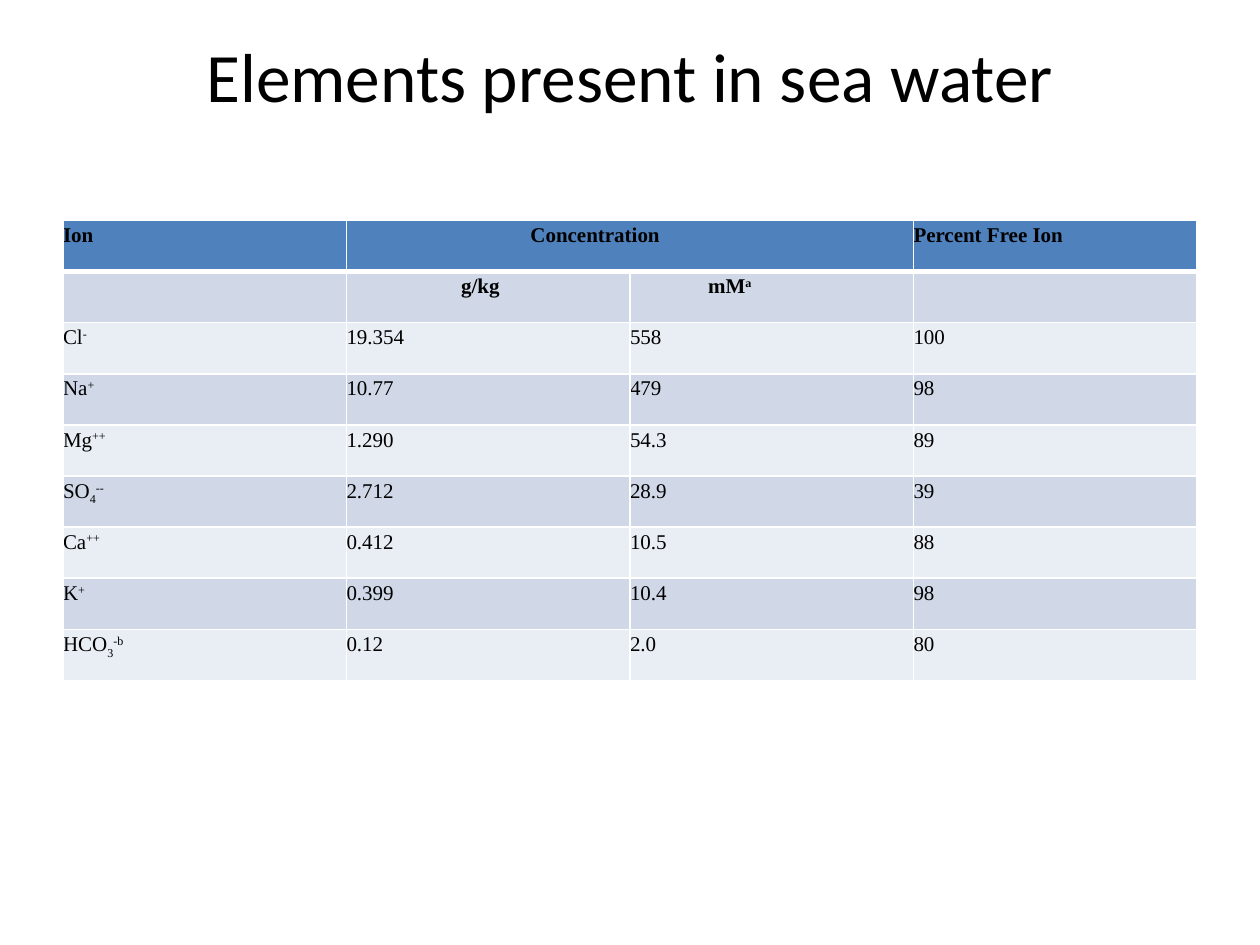
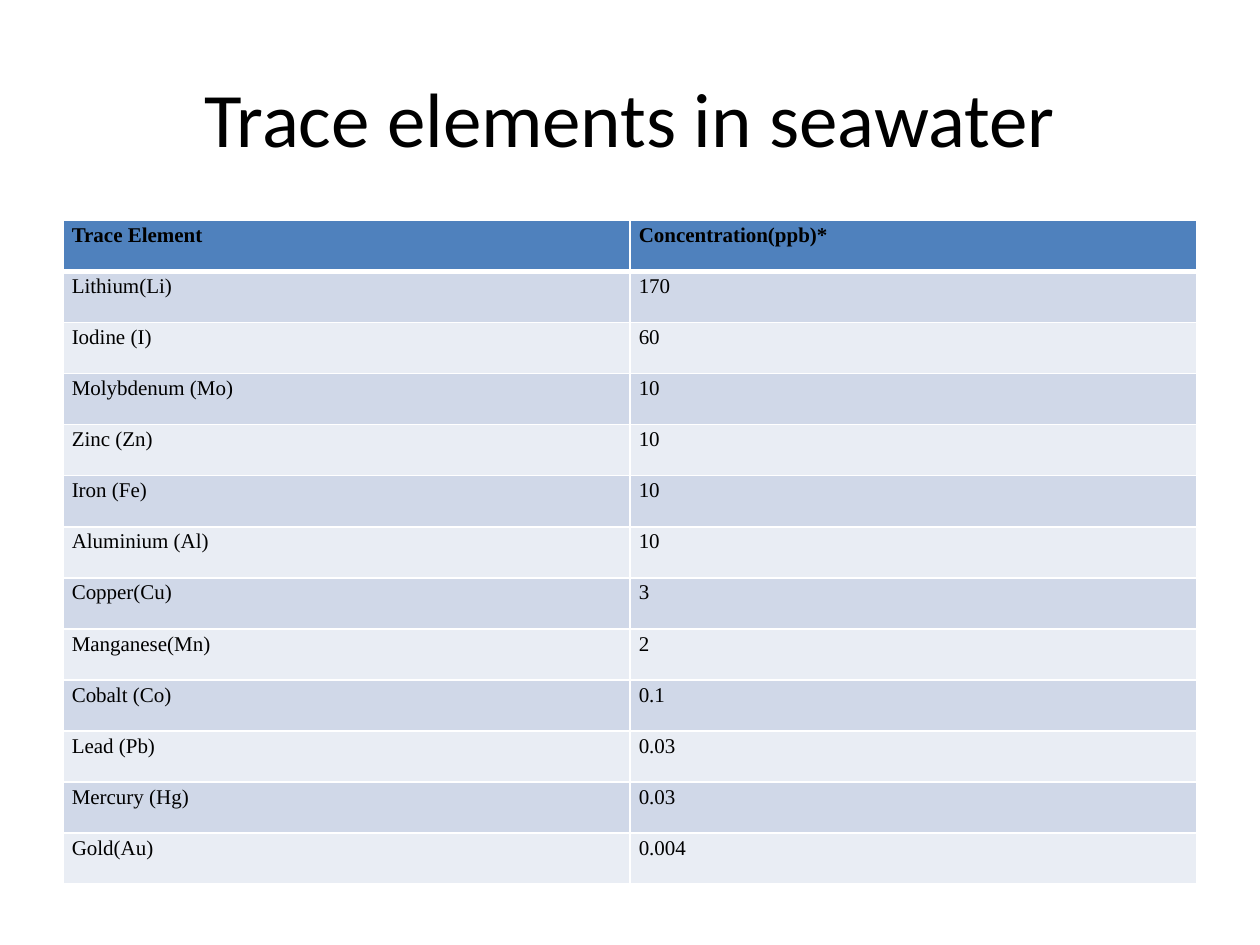
from lxml.etree import SubElement
from pptx import Presentation
from pptx.dml.color import RGBColor
from pptx.enum.text import MSO_ANCHOR, MSO_AUTO_SIZE, PP_ALIGN
from pptx.oxml.ns import qn
from pptx.util import Inches, Pt

COLORS = {
    "text": "000000",
    "header": "4F81BD",
    "odd_band": "D0D8E8",
    "even_band": "E9EDF4",
    "border": "FFFFFF",
}
TITLE_BOX = (0.5, 0.3, 9, 1.25)
TITLE_FONT = "Calibri"
TABLE_FONT = "Times New Roman"
SUBSCRIPT, SUPERSCRIPT = "-25000", "30000"

# A cell is plain text or a (base, subscript, superscript) tuple.
ION_ROWS = [
    ("Ion", "Concentration", "", "Percent Free Ion"),
    ("", "g/kg", ("mM", "", "a"), ""),
    (("Cl", "", "-"), "19.354", "558", "100"),
    (("Na", "", "+"), "10.77", "479", "98"),
    (("Mg", "", "++"), "1.290", "54.3", "89"),
    (("SO", "4", "--"), "2.712", "28.9", "39"),
    (("Ca", "", "++"), "0.412", "10.5", "88"),
    (("K", "", "+"), "0.399", "10.4", "98"),
    (("HCO", "3", "-b"), "0.12", "2.0", "80"),
]
ION_INDENTS = {(0, 1): 1.46, (1, 1): 0.91, (1, 2): 0.62}

TRACE_ROWS = [
    ("Trace Element", "Concentration(ppb)*"),
    ("Lithium(Li)", "170"),
    ("Iodine (I)", "60"),
    ("Molybdenum (Mo)", "10"),
    ("Zinc (Zn)", "10"),
    ("Iron (Fe)", "10"),
    ("Aluminium (Al)", "10"),
    ("Copper(Cu)", "3"),
    ("Manganese(Mn)", "2"),
    ("Cobalt (Co)", "0.1"),
    ("Lead (Pb)", "0.03"),
    ("Mercury (Hg)", "0.03"),
    ("Gold(Au)", "0.004"),
]


def set_attributes(target, values):
    for name, value in values.items():
        setattr(target, name, value)


def format_font(font, name, size, bold=False):
    set_attributes(font, {"name": name, "size": Pt(size), "bold": bold})
    font.color.rgb = RGBColor.from_string(COLORS["text"])


def place_title(slide, box, text, size, bottom_margin=0.05):
    title = slide.shapes.title
    values = dict(zip(("left", "top", "width", "height"), map(Inches, box)))
    set_attributes(title, values)
    set_attributes(title.text_frame, {
        "text": text,
        "word_wrap": True,
        "auto_size": MSO_AUTO_SIZE.NONE,
        "vertical_anchor": MSO_ANCHOR.MIDDLE,
        "margin_bottom": Inches(bottom_margin),
    })
    paragraph = title.text_frame.paragraphs[0]
    paragraph.alignment = PP_ALIGN.CENTER
    format_font(paragraph.runs[0].font, TITLE_FONT, size)


def add_borders(cell, row_index):
    """Draw thin white borders, with a thick one under the first row."""
    widths = {
        "L": 1,
        "R": 1,
        "T": 3 if row_index == 1 else 1,
        "B": 3 if row_index == 0 else 1,
    }
    properties = cell._tc.get_or_add_tcPr()
    for side, width in widths.items():
        line = SubElement(properties, qn(f"a:ln{side}"), w=str(Pt(width)))
        fill = SubElement(line, qn("a:solidFill"))
        SubElement(fill, qn("a:srgbClr"), val=COLORS["border"])


def fill_cell(cell, row_index):
    if row_index == 0:
        color = "header"
    else:
        color = "odd_band" if row_index % 2 else "even_band"
    cell.fill.solid()
    cell.fill.fore_color.rgb = RGBColor.from_string(COLORS[color])


def write_cell(cell, content, bold, space_after):
    paragraph = cell.text_frame.paragraphs[0]
    set_attributes(paragraph, {
        "alignment": PP_ALIGN.JUSTIFY,
        "line_spacing": 1.15,
        "space_after": Pt(space_after),
    })
    parts = (content,) if isinstance(content, str) else content
    for text, baseline in zip(parts, (None, SUBSCRIPT, SUPERSCRIPT)):
        if not text:
            continue
        run = paragraph.add_run()
        run.text = text
        format_font(run.font, TABLE_FONT, 12, bold)
        if baseline:
            run.font._element.set("baseline", baseline)


def add_data_table(slide, box, rows, bold_rows=1, margin=0.0, space_after=0,
                   indents=None):
    """Add equal rows and columns; indents maps (row, column) to a left margin."""
    indents = indents or {}
    frame = slide.shapes.add_table(len(rows), len(rows[0]), *map(Inches, box))
    table = frame.table
    for row_index, row in enumerate(rows):
        for column_index, content in enumerate(row):
            cell = table.cell(row_index, column_index)
            left = indents.get((row_index, column_index), margin)
            set_attributes(cell, {
                "margin_left": Inches(left),
                "margin_right": Inches(margin),
                "margin_top": 0,
                "margin_bottom": 0,
            })
            add_borders(cell, row_index)
            fill_cell(cell, row_index)
            write_cell(cell, content, row_index < bold_rows, space_after)
    return table


def add_title_only_slide(presentation):
    return presentation.slides.add_slide(presentation.slide_layouts[5])


def build_ion_slide(presentation):
    slide = add_title_only_slide(presentation)
    place_title(slide, TITLE_BOX, "Elements present in sea water", 39.6,
                bottom_margin=0.72)
    table = add_data_table(slide, (0.5, 1.75, 9, 3.65), ION_ROWS, bold_rows=2,
                           space_after=10, indents=ION_INDENTS)
    table.cell(0, 1).merge(table.cell(0, 2))


def build_trace_slide(presentation):
    slide = add_title_only_slide(presentation)
    place_title(slide, TITLE_BOX, "Trace elements in seawater", 44)
    add_data_table(slide, (0.5, 1.75, 9, 5.27), TRACE_ROWS, margin=0.07)


def main():
    presentation = Presentation()
    presentation.slide_width = Inches(10)
    presentation.slide_height = Inches(7.5)
    build_ion_slide(presentation)
    build_trace_slide(presentation)
    presentation.save("out.pptx")


if __name__ == "__main__":
    main()
